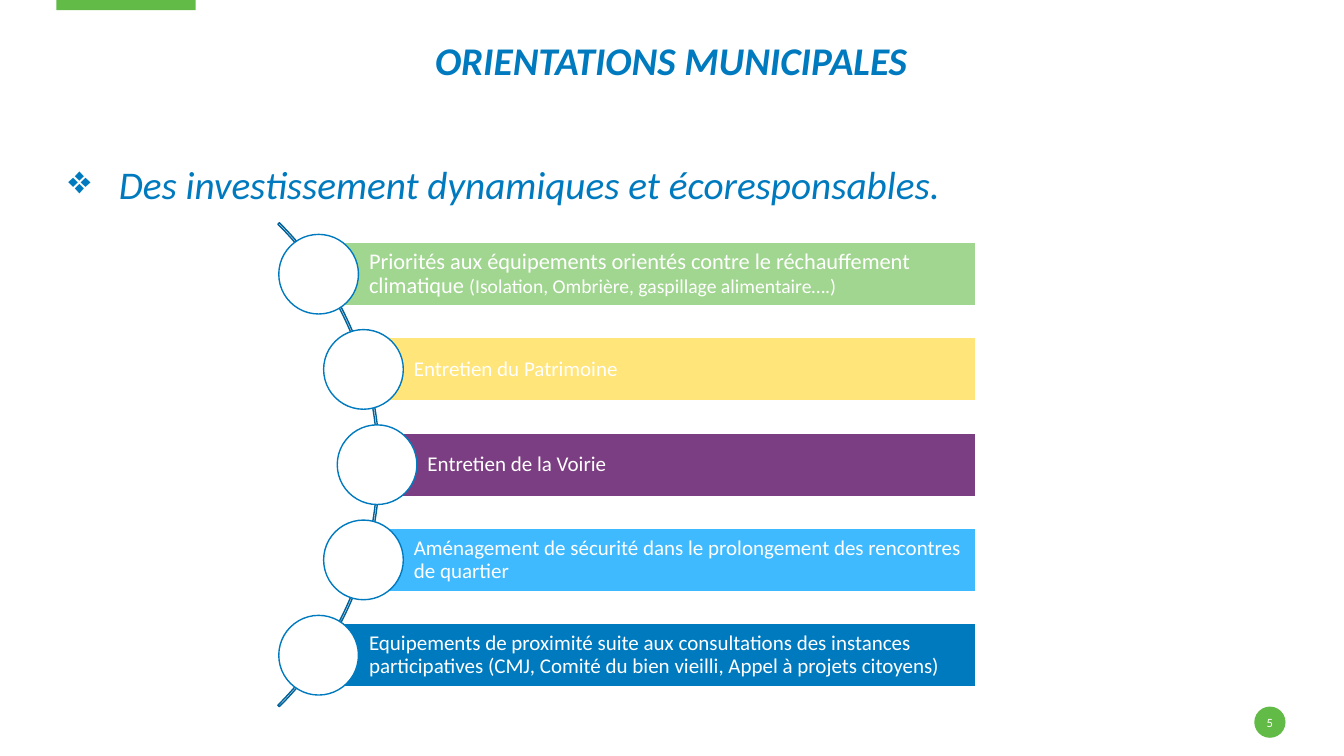
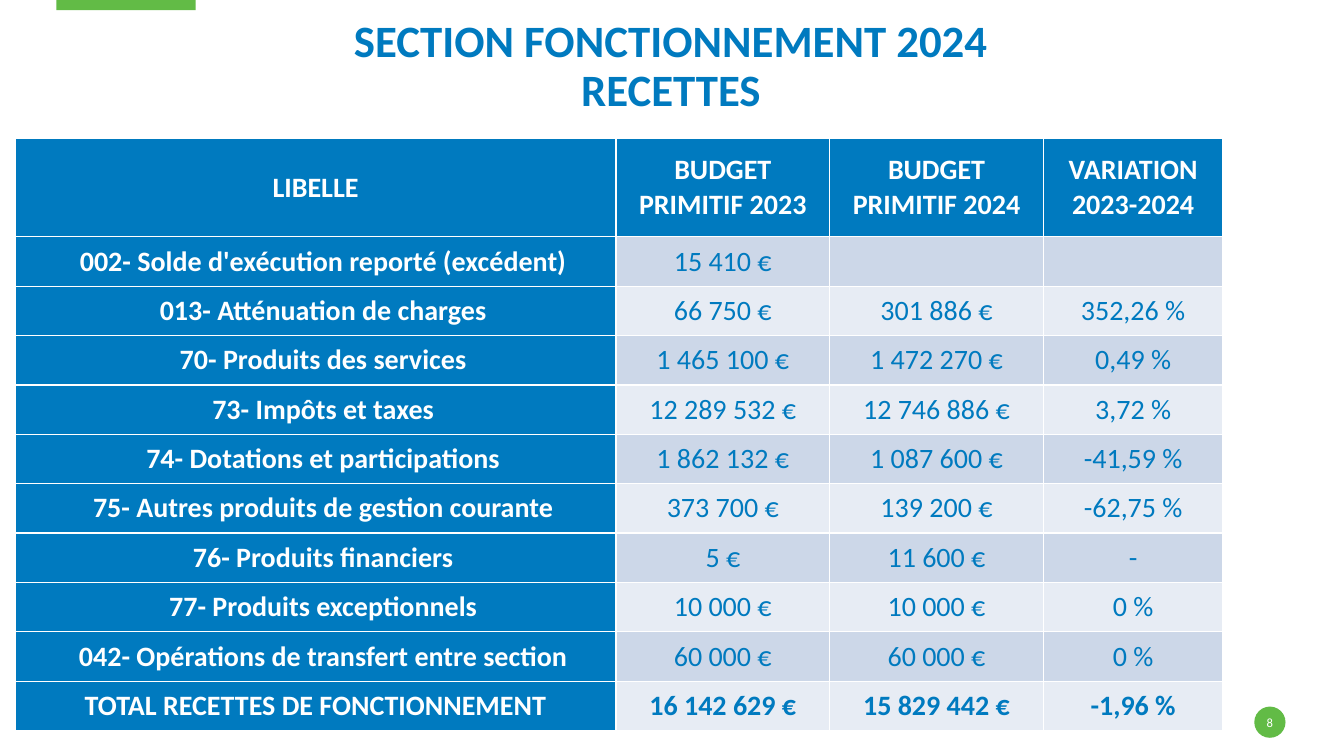
from math import sqrt

from lxml import etree
from pptx import Presentation
from pptx.dml.color import RGBColor
from pptx.enum.shapes import MSO_SHAPE as Shape
from pptx.enum.text import MSO_ANCHOR as Anchor, PP_ALIGN as Align
from pptx.oxml.ns import qn
from pptx.util import Inches, Pt

FONT = "Calibri"
BLUE, GREEN, WHITE = "007ABF", "62BB46", "FFFFFF"
BAND_DARK, BAND_LIGHT = "CCD7E8", "E7ECF4"


def style(font, size, color, bold=False, italic=False):
    font.name, font.size = FONT, Pt(size)
    font.bold, font.italic = bold, italic
    font.color.rgb = RGBColor.from_string(color)


def add_figure(page, kind, left, top, width, height, fill=None, line=None):
    figure = page.shapes.add_shape(
        kind, Inches(left), Inches(top), Inches(width), Inches(height))
    figure.shadow.inherit = False
    if fill:
        figure.fill.solid()
        figure.fill.fore_color.rgb = RGBColor.from_string(fill)
    else:
        figure.fill.background()
    if line:
        figure.line.color.rgb = RGBColor.from_string(line)
        figure.line.width = Pt(1)
    else:
        figure.line.fill.background()
    return figure


deck = Presentation()
deck.slide_width, deck.slide_height = Inches(13.33), Inches(7.5)

# Shared frame: top band, page number and title
# Page number, title lines, title bottom, title size, italic title
FRAMES = [
    ("5", ["ORIENTATIONS MUNICIPALES"], 0.83, 28, True),
    ("8", ["SECTION FONCTIONNEMENT 2024", "RECETTES"], 1.15, 32, False),
]
pages = []
for number, lines, bottom, size, italic in FRAMES:
    page = deck.slides.add_slide(deck.slide_layouts[6])
    pages.append(page)
    add_figure(page, Shape.RECTANGLE, 0.56, -0.02, 1.38, 0.12, GREEN)

    badge = add_figure(page, Shape.OVAL, 12.44, 7.01, 0.31, 0.31, GREEN)
    frame = badge.text_frame
    frame.margin_left = frame.margin_right = 0
    frame.margin_top = frame.margin_bottom = 0
    frame.word_wrap = False
    frame.text = number
    frame.paragraphs[0].alignment = Align.CENTER
    style(frame.paragraphs[0].font, 9, WHITE)

    height = 0.5 * len(lines)
    box = page.shapes.add_textbox(
        Inches(0.56), Inches(bottom - height), Inches(12.19), Inches(height))
    frame = box.text_frame
    frame.word_wrap = True
    frame.vertical_anchor = Anchor.BOTTOM
    frame.margin_left = frame.margin_right = 0
    frame.margin_top = frame.margin_bottom = 0
    frame.text = "\n".join(lines)
    for para in frame.paragraphs:
        para.alignment = Align.CENTER
        para.line_spacing = 0.9
        style(para.font, size, BLUE, True, italic)

orientations, recettes = pages

# Orientations: bulleted subtitle
box = orientations.shapes.add_textbox(
    Inches(0.58), Inches(1.59), Inches(12.42), Inches(0.6))
frame = box.text_frame
frame.word_wrap = True
frame.text = "Des investissement dynamiques et écoresponsables."
para = frame.paragraphs[0]
para.line_spacing = 0.9
settings = para._p.get_or_add_pPr()
settings.set("marL", str(Inches(0.5)))
settings.set("indent", str(Inches(-0.5)))
etree.SubElement(settings, qn("a:buChar")).set("char", "❖")
style(para.font, 28, BLUE, italic=True)

# Orientations: arc, then bars that start on it, each with a disc
ARC_X, ARC_Y, ARC_SIZE = 0.37, 4.61, 6.79
ORBIT, PITCH, BAR_RIGHT, BAR_HEIGHT, DISC = 3.37, 0.945, 9.68, 0.63, 0.79

arc = add_figure(orientations, Shape.BLOCK_ARC, ARC_X - ARC_SIZE / 2,
                 ARC_Y - ARC_SIZE / 2, ARC_SIZE, ARC_SIZE, line="006299")
for index, value in enumerate((189, 27, 0.003)):
    arc.adjustments[index] = value

# Fill, then text runs with their sizes
BARS = [
    ("A1D690", [("Priorités aux équipements orientés contre le réchauffement "
                 "climatique ", 16),
                ("(Isolation, Ombrière, gaspillage alimentaire….)", 14)]),
    ("FFE57A", [("Entretien du Patrimoine", 15)]),
    ("7C3E82", [("Entretien de la Voirie", 15)]),
    ("40BAFF", [("Aménagement de sécurité dans le prolongement des rencontres "
                 "de quartier", 15)]),
    (BLUE, [("Equipements de proximité suite aux consultations des instances "
             "participatives (CMJ, Comité du bien vieilli, Appel à projets "
             "citoyens)", 15)]),
]
for index, (fill, runs) in enumerate(BARS):
    offset = (index - 2) * PITCH
    left = ARC_X + sqrt(ORBIT ** 2 - offset ** 2)
    middle = ARC_Y + offset
    bar = add_figure(orientations, Shape.RECTANGLE, left,
                     middle - BAR_HEIGHT / 2, BAR_RIGHT - left, BAR_HEIGHT,
                     fill, WHITE)
    frame = bar.text_frame
    frame.word_wrap = True
    frame.vertical_anchor = Anchor.MIDDLE
    frame.margin_left = Inches(0.5)
    frame.margin_right = frame.margin_top = frame.margin_bottom = Inches(0.04)
    para = frame.paragraphs[0]
    para.alignment = Align.LEFT
    para.line_spacing = 0.9
    for text, size in runs:
        span = para.add_run()
        span.text = text
        style(span.font, size, WHITE)
    add_figure(orientations, Shape.OVAL, left - DISC / 2, middle - DISC / 2,
               DISC, DISC, WHITE, BLUE)

# Recettes: budget table
ROWS = [
    ("LIBELLE", "BUDGET\nPRIMITIF 2023", "BUDGET PRIMITIF 2024",
     "VARIATION 2023-2024"),
    ("002- Solde d'exécution reporté (excédent)", "15 410 €", "", ""),
    ("013- Atténuation de charges", "66 750 €", "301 886 €", "352,26 %"),
    ("70- Produits des services", "1 465 100 €", "1 472 270 €", "0,49 %"),
    ("73- Impôts et taxes", "12 289 532 €", "12 746 886 €", "3,72 %"),
    ("74- Dotations et participations", "1 862 132 €", "1 087 600 €",
     "-41,59 %"),
    ("75- Autres produits de gestion courante", "373 700 €", "139 200 €",
     "-62,75 %"),
    ("76- Produits financiers", "5 €", "11 600 €", "-"),
    ("77- Produits exceptionnels", "10 000 €", "10 000 €", "0 %"),
    ("042- Opérations de transfert entre section", "60 000 €", "60 000 €",
     "0 %"),
    ("TOTAL RECETTES DE FONCTIONNEMENT", "16 142 629 €", "15 829 442 €",
     "-1,96 %"),
]
WIDTHS = [5.96, 2.12, 2.12, 1.78]
ROW_HEIGHT = 0.49
LAST = len(ROWS) - 1

table = recettes.shapes.add_table(
    len(ROWS), len(WIDTHS), Inches(0.15), Inches(1.37),
    Inches(sum(WIDTHS)), Inches(ROW_HEIGHT * (len(ROWS) + 1))).table
for column, width in zip(table.columns, WIDTHS):
    column.width = Inches(width)

for r, texts in enumerate(ROWS):
    table.rows[r].height = Inches(ROW_HEIGHT * (1 if r else 2))
    for c, text in enumerate(texts):
        heading = r == 0 or c == 0
        cell = table.cell(r, c)
        cell.fill.solid()
        cell.fill.fore_color.rgb = RGBColor.from_string(
            BLUE if heading else BAND_DARK if r % 2 else BAND_LIGHT)
        cell.vertical_anchor = Anchor.MIDDLE
        cell.margin_left = cell.margin_right = Inches(0.05)
        cell.margin_top = cell.margin_bottom = 0
        cell.text = text
        for para in cell.text_frame.paragraphs:
            para.alignment = Align.CENTER
            if c == 0 and 0 < r < LAST:
                para._p.get_or_add_pPr().set("indent", str(Inches(0.15)))
            style(para.font, 20, WHITE if heading else BLUE,
                  heading or r == LAST)

deck.save("out.pptx")
